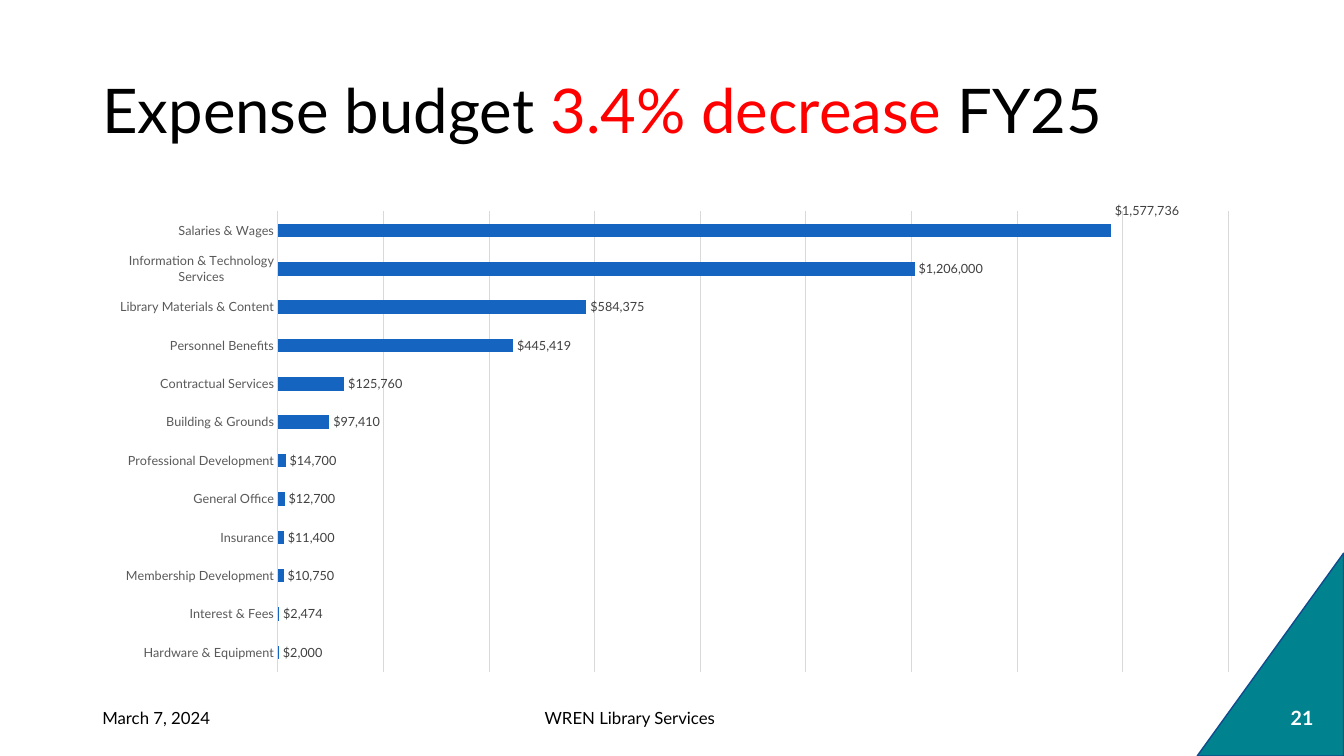
from lxml import etree
from pptx import Presentation
from pptx.chart.data import CategoryChartData
from pptx.dml.color import RGBColor
from pptx.enum import chart as charts, shapes, text
from pptx.oxml import ns
from pptx.util import Cm, Pt

FONT = "Lato"
MONEY = '"$"#,##0'
TITLE = [("Expense budget ", "000000"), ("3.4% decrease ", "FF0000"), ("FY25", "000000")]
DATE, OWNER, NUMBER = "March 7, 2024", "WREN Library Services", "21"
EXPENSES = [
    ("Hardware & Equipment", 2000),
    ("Interest & Fees", 2474),
    ("Membership Development", 10750),
    ("Insurance", 11400),
    ("General Office", 12700),
    ("Professional Development", 14700),
    ("Building & Grounds", 97410),
    ("Contractual Services", 125760),
    ("Personnel Benefits", 445419),
    ("Library Materials & Content", 584375),
    ("Information & Technology Services", 1206000),
    ("Salaries & Wages", 1577736),
]
PLOT_AREA = {"layoutTarget": "inner", "xMode": "edge", "yMode": "edge",
             "x": 0.16, "y": 0.02, "w": 0.82, "h": 0.96}
TOP_LABEL = {"x": 0, "y": -0.04}

# Page measures in centimetres
MARGIN, CONTENT_WIDTH = 2.33, 29.21
FOOTER_TOP, FOOTER_HEIGHT = 17.58, 1.01


def color(value):
    return RGBColor.from_string(value)


def style_font(font, size, shade, bold=False):
    font.name, font.size, font.bold = FONT, Pt(size), bold
    font.color.rgb = color(shade)


def add_text(page, spans, left, top, width, height, size=12,
             align=text.PP_ALIGN.LEFT, bold=False, spacing=1.0):
    box = page.shapes.add_textbox(Cm(left), Cm(top), Cm(width), Cm(height))
    frame = box.text_frame
    frame.word_wrap = True
    frame.vertical_anchor = text.MSO_ANCHOR.MIDDLE
    para = frame.paragraphs[0]
    para.alignment, para.line_spacing = align, spacing
    for words, shade in spans:
        span = para.add_run()
        span.text = words
        style_font(span.font, size, shade, bold)


def set_layout(layout, values):
    manual = etree.SubElement(layout, ns.qn("c:manualLayout"))
    for name, value in values.items():
        etree.SubElement(manual, ns.qn("c:" + name)).set("val", str(value))


def add_corner(page):
    # The turned triangle stands in the bottom right corner
    corner = page.shapes.add_shape(shapes.MSO_SHAPE.RIGHT_TRIANGLE,
                                   Cm(29.46), Cm(14.65), Cm(5.11), Cm(3.69))
    corner.rotation = 270
    corner.shadow.inherit = False
    corner.fill.solid()
    corner.fill.fore_color.rgb = color("00838E")
    corner.line.color.rgb = color("104B8E")
    corner.line.width = Pt(1)


def add_expense_chart(page):
    data = CategoryChartData(number_format=MONEY)
    data.categories = [name for name, _ in EXPENSES]
    data.add_series("Series 1", [amount for _, amount in EXPENSES])
    chart = page.shapes.add_chart(charts.XL_CHART_TYPE.BAR_CLUSTERED, Cm(MARGIN), Cm(5.08),
                                  Cm(CONTENT_WIDTH), Cm(12.09), data).chart
    chart.has_legend = chart.has_title = False
    style_font(chart.font, 10, "000000")

    # Axes
    names, amounts = chart.category_axis, chart.value_axis
    names.major_tick_mark = charts.XL_TICK_MARK.NONE
    style_font(names.tick_labels.font, 9, "595959")
    amounts.visible = False
    amounts.minimum_scale, amounts.maximum_scale, amounts.major_unit = 0, 1800000, 200000
    amounts.has_major_gridlines = True
    for line in (names.format.line, amounts.major_gridlines.format.line):
        line.color.rgb = color("D9D9D9")
        line.width = Pt(0.75)

    # Bars and their labels
    plot = chart.plots[0]
    plot.gap_width, plot.vary_by_categories = 182, False
    series = plot.series[0]
    series.format.fill.solid()
    series.format.fill.fore_color.rgb = color("1565C0")
    labels = series.data_labels
    labels.show_value = True
    labels.number_format, labels.number_format_is_linked = MONEY, False
    top_label = series.points[len(EXPENSES) - 1].data_label
    for label in (labels, top_label):
        label.position = charts.XL_LABEL_POSITION.OUTSIDE_END
        style_font(label.font, 9, "404040")

    # Plot area size and the raised top label
    area = chart.element.xpath("//c:plotArea")[0]
    for old in area.findall(ns.qn("c:layout")):
        area.remove(old)
    for parent, index, values in (
            (area, 0, PLOT_AREA),
            (chart.element.xpath("//c:dLbl")[0], 1, TOP_LABEL)):
        layout = etree.Element(ns.qn("c:layout"))
        parent.insert(index, layout)
        set_layout(layout, values)


def main():
    deck = Presentation()
    deck.slide_width, deck.slide_height = Cm(33.87), Cm(19.05)
    page = deck.slides.add_slide(deck.slide_layouts[6])
    center = text.PP_ALIGN.CENTER

    add_corner(page)
    add_text(page, TITLE, MARGIN, 1.01, CONTENT_WIDTH, 3.68, size=44, spacing=0.9)
    add_expense_chart(page)

    # Footer
    add_text(page, [(DATE, "000000")], MARGIN, FOOTER_TOP, 7.62, FOOTER_HEIGHT)
    add_text(page, [(OWNER, "000000")], 10.16, FOOTER_TOP, 11.43, FOOTER_HEIGHT, align=center)
    add_text(page, [(NUMBER, "FFFFFF")], 32.08, FOOTER_TOP, 1.47, FOOTER_HEIGHT,
             size=14, align=center, bold=True)
    deck.save("out.pptx")


if __name__ == "__main__":
    main()
